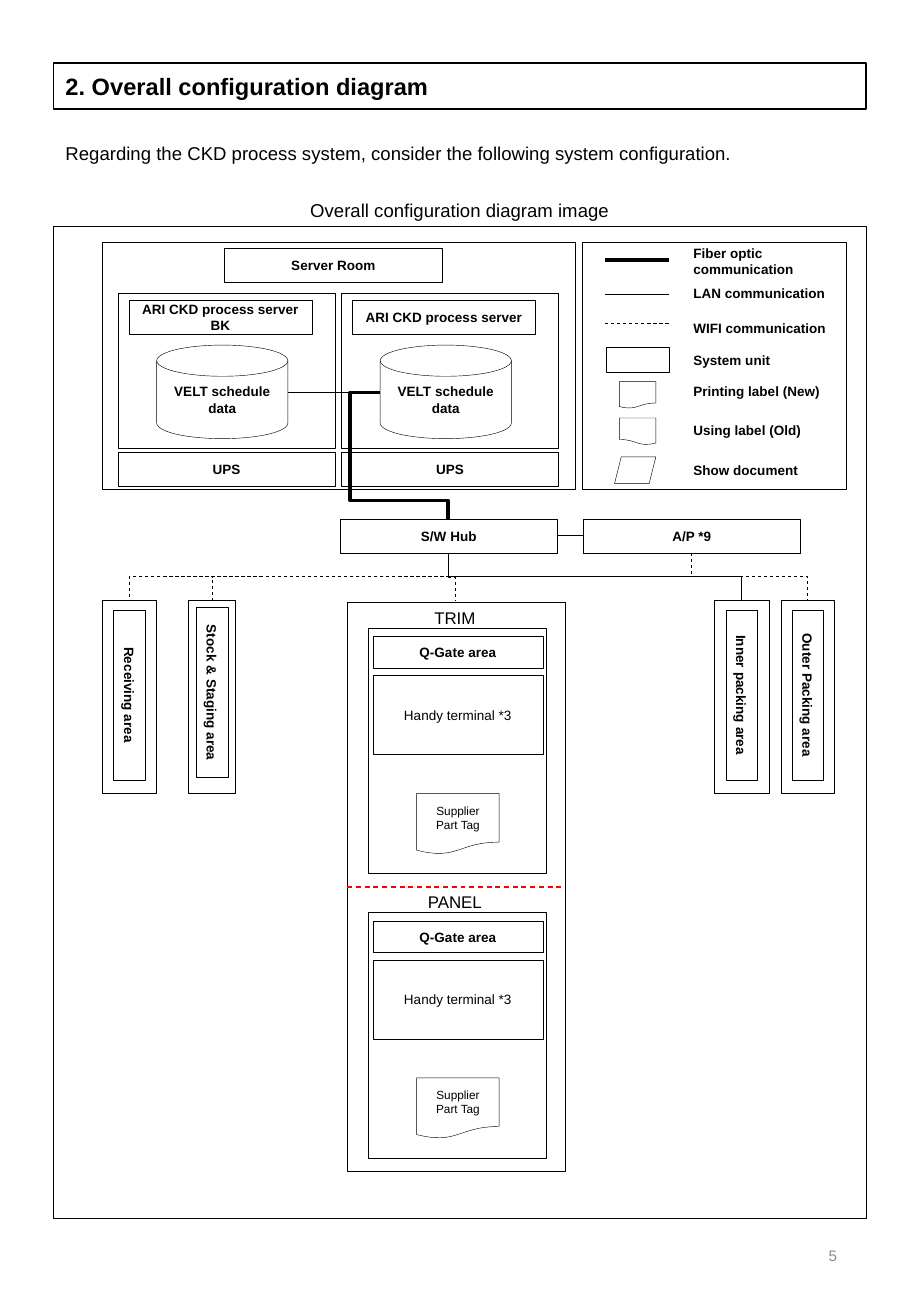
from lxml import etree
from pptx import Presentation
from pptx.dml.color import RGBColor
from pptx.enum.dml import MSO_LINE
from pptx.enum.shapes import MSO_CONNECTOR, MSO_SHAPE
from pptx.enum.text import MSO_ANCHOR, PP_ALIGN
from pptx.oxml.ns import qn
from pptx.util import Inches, Pt

BLACK = RGBColor(0, 0, 0)
WHITE = RGBColor(255, 255, 255)
GREY = RGBColor(0x8C, 0x8C, 0x8C)
RED = RGBColor(255, 0, 0)
RECT = MSO_SHAPE.RECTANGLE
DISK = MSO_SHAPE.FLOWCHART_MAGNETIC_DISK
PAGE = MSO_SHAPE.FLOWCHART_DOCUMENT
SLANT = MSO_SHAPE.PARALLELOGRAM
PLAIN, ELBOW = MSO_CONNECTOR.STRAIGHT, MSO_CONNECTOR.ELBOW
DASH = MSO_LINE.DASH
LEFT, MID, RIGHT = PP_ALIGN.LEFT, PP_ALIGN.CENTER, PP_ALIGN.RIGHT
TOP, CENTER = MSO_ANCHOR.TOP, MSO_ANCHOR.MIDDLE


def write(shape, text, size, bold, align, color=BLACK, anchor=CENTER):
    """Put one styled paragraph into a shape."""
    frame = shape.text_frame
    frame.word_wrap = True
    frame.vertical_anchor = anchor
    para = frame.paragraphs[0]
    para.text = text
    para.alignment = align
    font = para.font
    font.name, font.size, font.bold = "Arial", Pt(size), bold
    font.color.rgb = color


def label(slide, box, text, size=8, bold=False, align=LEFT, **style):
    """Add a text box."""
    shape = slide.shapes.add_textbox(*map(Inches, box))
    write(shape, text, size, bold, align, **style)


def block(slide, box, text="", kind=RECT, size=8, bold=True,
          align=MID, width=0.25, fill=None):
    """Add an outlined shape, with text if given."""
    shape = slide.shapes.add_shape(kind, *map(Inches, box))
    shape.shadow.inherit = False
    if fill is None:
        shape.fill.background()
    else:
        shape.fill.solid()
        shape.fill.fore_color.rgb = fill
    shape.line.color.rgb = BLACK
    shape.line.width = Pt(width)
    if text:
        write(shape, text, size, bold, align)
    return shape


def link(slide, ends, width=0.5, dash=None, color=BLACK, kind=PLAIN):
    """Add a connector between two points."""
    line = slide.shapes.add_connector(kind, *map(Inches, ends))
    line.line.color.rgb = color
    line.line.width = Pt(width)
    line.line.dash_style = dash
    etree.SubElement(line._element.spPr, qn("a:effectLst"))
    return line


def drop(slide, start, end, dash=None):
    """Add an elbow that leaves downwards and enters from above."""
    (x1, y1), (x2, y2) = start, end
    cx, cy = (x1 + x2) / 2, (y1 + y2) / 2
    run, fall = (x2 - x1) / 2, (y2 - y1) / 2
    line = link(slide, (cx - fall, cy + run, cx + fall, cy - run),
                dash=dash, kind=ELBOW)
    line._element.spPr.find(qn("a:xfrm")).set("rot", "5400000")


def fiber(slide, ends):
    """Add the thick line that loops from the server to the hub."""
    line = link(slide, ends, width=2, kind=ELBOW)
    shape = line._element.spPr.find(qn("a:prstGeom"))
    shape.set("prst", "bentConnector4")
    guides = shape.find(qn("a:avLst"))
    if guides is None:
        guides = etree.SubElement(shape, qn("a:avLst"))
    for name, value in (("adj1", -44300), ("adj2", 85300)):
        etree.SubElement(guides, qn("a:gd"), name=name, fmla=f"val {value}")


def heading(slide, left, top, width):
    """Add the title, the intro and the caption."""
    block(slide, (left, top, width, 0.38), "2. Overall configuration diagram",
          size=14, align=LEFT, width=1)
    label(slide, (left, top + 0.6, width, 0.29),
          "Regarding the CKD process system, consider the following "
          "system configuration.", size=11, anchor=TOP)
    label(slide, (left, top + 1.07, width, 0.29),
          "Overall configuration diagram image", size=11, align=MID,
          anchor=TOP)


def server(slide, left, top, name):
    """Add one server with its data disk and its UPS."""
    block(slide, (left, top, 1.79, 1.28))
    block(slide, (left + 0.09, top + 0.06, 1.51, 0.28), name)
    block(slide, (left + 0.32, top + 0.43, 1.08, 0.77),
          "VELT schedule data", DISK)
    block(slide, (left, top + 1.31, 1.79, 0.28), "UPS")


def room(slide, left, top):
    """Add the server room with its two linked servers."""
    block(slide, (left, top, 3.9, 2.04))
    block(slide, (left + 1.01, top + 0.05, 1.79, 0.28), "Server Room")
    names = ("ARI CKD process server BK", "ARI CKD process server")
    for i, name in enumerate(names):
        server(slide, left + 0.13 + 1.84 * i, top + 0.42, name)
    mid = top + 1.24
    link(slide, (left + 1.53, mid, left + 2.29, mid))
    fiber(slide, (left + 2.29, mid, left + 2.85, top + 2.28))


def legend(slide, left, top):
    """Add the key to lines and symbols."""
    block(slide, (left, top, 2.18, 2.04))
    lines = ((0.15, 2.25, None), (0.43, 0.5, None), (0.67, 0.5, DASH))
    for y, width, dash in lines:
        link(slide, (left + 0.19, top + y, left + 0.72, top + y), width, dash)
    marks = ((0.2, 0.87, 0.52, 0.2, RECT), (0.31, 1.15, 0.3, 0.22, PAGE),
             (0.31, 1.45, 0.3, 0.22, PAGE), (0.27, 1.77, 0.34, 0.22, SLANT))
    for x, y, width, height, kind in marks:
        mark = block(slide, (left + x, top + y, width, height), kind=kind)
        if y == 1.45:
            mark._element.spPr.find(qn("a:xfrm")).set("flipH", "1")
    names = ((0.03, "Fiber optic communication"), (0.29, "LAN communication"),
             (0.58, "WIFI communication"), (0.84, "System unit"),
             (1.1, "Printing label (New)"), (1.42, "Using label (Old)"),
             (1.75, "Show document"))
    for y, name in names:
        label(slide, (left + 0.82, top + y, 1.32, 0.26), name, bold=True)


def network(slide, left, top):
    """Add the hub and the access point, joined by a line."""
    hub = block(slide, (left, top, 1.79, 0.28), "S/W Hub")
    point = block(slide, (left + 2, top, 1.79, 0.28), "A/P *9")
    line = link(slide, (left + 2, top + 0.14, left + 1.79, top + 0.14))
    line.begin_connect(point, 1)
    line.end_connect(hub, 3)


def area(slide, box, name, mid, source, dash):
    """Add one upright area and its drop line."""
    left, top, width, _ = box
    cx = left + width / 2
    block(slide, box)
    sign = block(slide, (cx - 0.7, mid - 0.13, 1.4, 0.26), name)
    sign.rotation = 90
    drop(slide, source, (cx, top), dash)


def gate(slide, left, top, name):
    """Add one named Q-Gate section."""
    label(slide, (left, top, 1.77, 0.27), name, size=10, align=MID, anchor=TOP)
    block(slide, (left + 0.17, top + 0.22, 1.47, 2.02), fill=WHITE)
    block(slide, (left + 0.21, top + 0.29, 1.4, 0.26), "Q-Gate area",
          fill=WHITE)
    block(slide, (left + 0.21, top + 0.61, 1.4, 0.65), "Handy terminal *3",
          bold=False, fill=WHITE)
    block(slide, (left + 0.57, top + 1.58, 0.68, 0.5), "Supplier Part Tag",
          PAGE, size=7, bold=False, fill=WHITE)


def gates(slide, left, top):
    """Add the TRIM and PANEL column."""
    block(slide, (left, top, 1.79, 4.68), fill=WHITE)
    for i, name in enumerate(("TRIM", "PANEL")):
        gate(slide, left, top - 0.01 + 2.34 * i, name)
    link(slide, (left, top + 2.34, left + 1.78, top + 2.34),
         0.75, DASH, RED)


def main():
    """Build and save the slide."""
    deck = Presentation()
    deck.slide_width, deck.slide_height = Inches(7.5), Inches(10.83)
    slide = deck.slides.add_slide(deck.slide_layouts[6])
    heading(slide, 0.44, 0.52, 6.69)
    block(slide, (0.44, 1.86, 6.69, 8.17))
    room(slide, 0.84, 1.99)
    legend(slide, 4.79, 1.99)
    network(slide, 2.8, 4.27)
    hub, point = (3.69, 4.55), (5.69, 4.55)
    areas = ((0.84, 0.45, "Receiving area", 5.72, point, DASH),
             (1.55, 0.39, "Stock & Staging area", 5.7, point, DASH),
             (6.43, 0.44, "Outer Packing area", 5.72, point, DASH),
             (5.88, 0.45, "Inner packing area", 5.72, hub, None))
    for left, width, name, mid, source, dash in areas:
        area(slide, (left, 4.94, width, 1.59), name, mid, source, dash)
    gates(slide, 2.86, 4.96)
    drop(slide, hub, (3.75, 4.95), DASH)
    label(slide, (5.3, 10.04, 1.69, 0.58), "5", size=9, align=RIGHT,
          color=GREY)
    deck.save("out.pptx")


if __name__ == "__main__":
    main()
